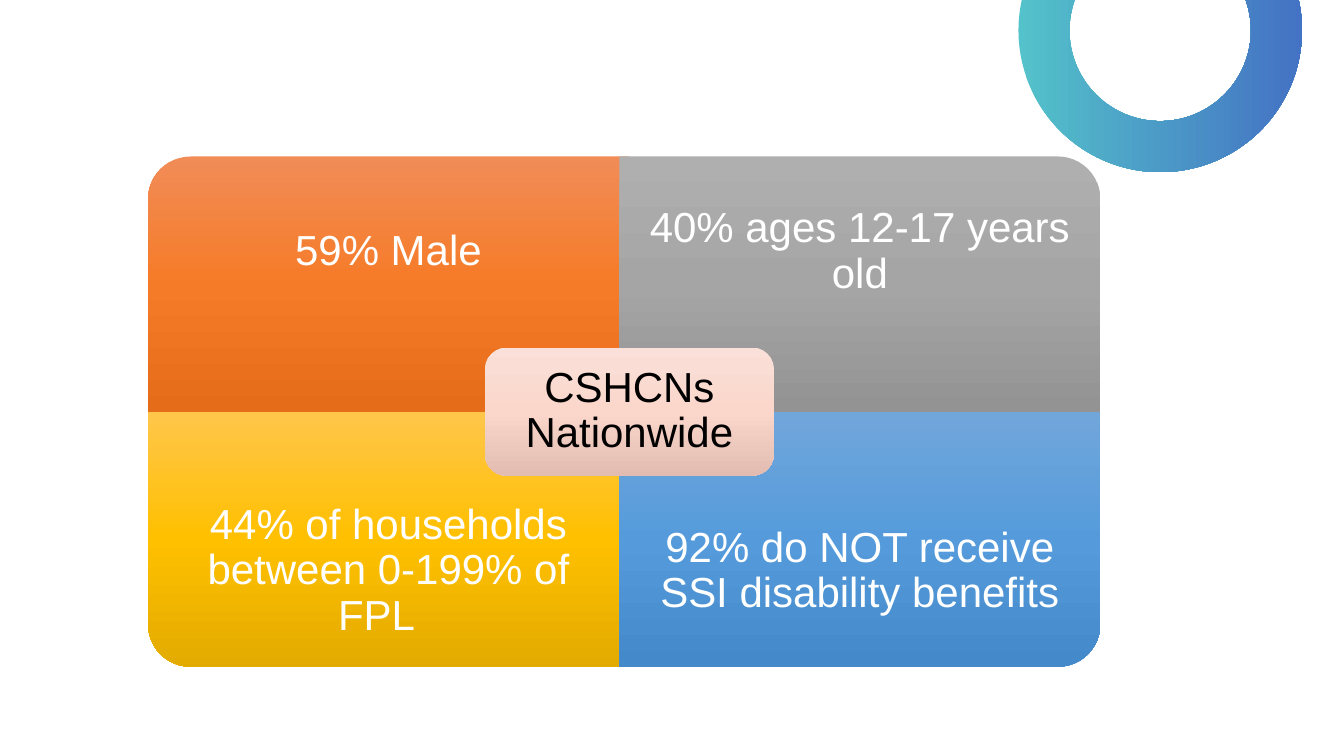
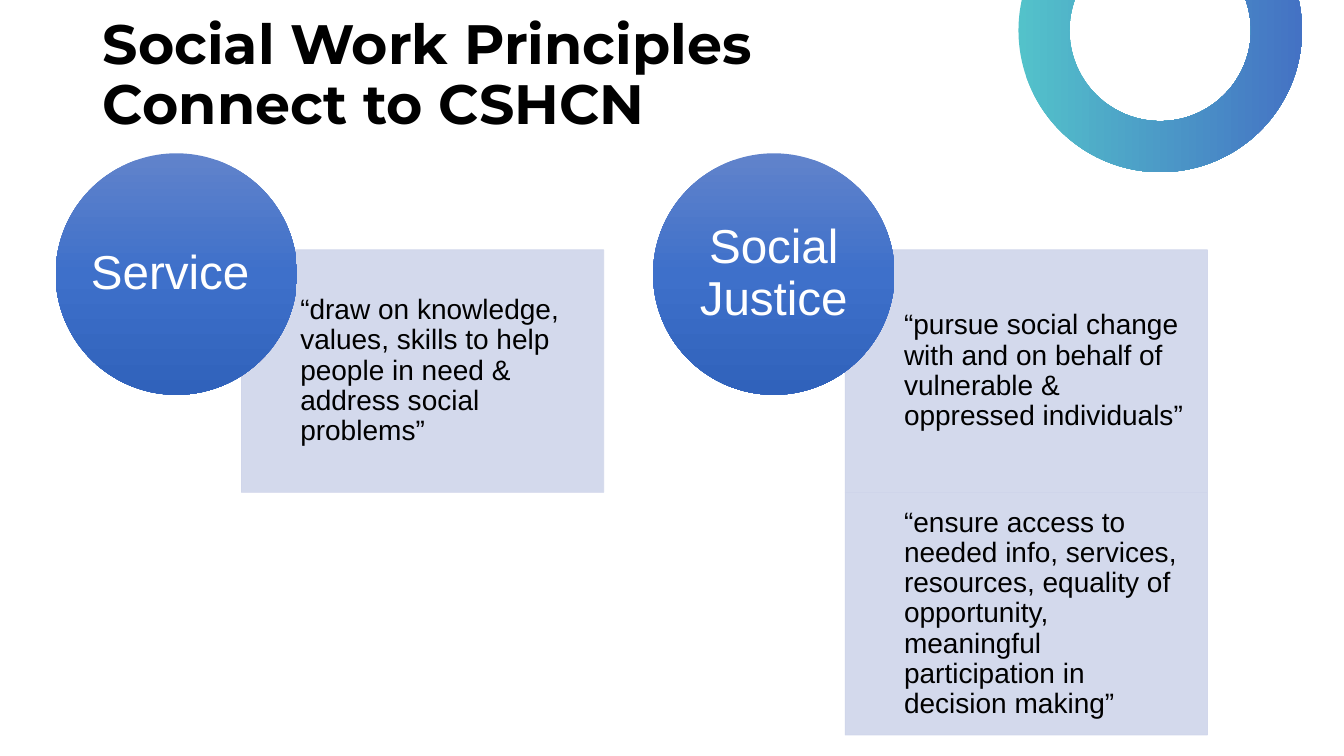
from dataclasses import dataclass

from lxml import etree
from pptx import Presentation
from pptx import util as u
from pptx.dml.color import RGBColor
from pptx.enum import shapes, text
from pptx.oxml import ns

PX = 9525  # EMU in one px
KIND = shapes.MSO_SHAPE


@dataclass(frozen=True)
class Theme:
    heading: str = "Montserrat"
    body: str = "Arial"
    dark: str = "000000"
    light: str = "FFFFFF"
    title_size: float = 39.6
    circle_size: int = 34
    tile_size: int = 30
    panel_size: int = 20
    spacing: float = 0.9
    ring: tuple = ("53C2CA", "4472C4")
    orange: tuple = ("F18C57", "F67B28", "E56C19")
    grey: tuple = ("AFAFAF", "A5A5A5", "939393")
    gold: tuple = ("FFC64B", "FFC000", "E3AB00")
    sky: tuple = ("71A6DB", "559BDB", "448ACA")
    blush: tuple = ("FAE0D8", "FAD6CB", "E2BCB1")
    blue: tuple = ("6183CB", "3E70CA", "3062BB")
    panel: str = "CFD5EA"
    panel_alpha: int = 90


T = Theme()


def px(*lengths):
    return [u.Emu(n * PX) for n in lengths]


def write(sp, words, size, color=T.dark, font=T.body, bold=False,
          align=text.PP_ALIGN.CENTER, insets=(0, 0, 0, 0)):
    """Fill a shape with one vertically centred paragraph; insets run left, top, right, bottom."""
    tf = sp.text_frame
    tf.word_wrap = True
    tf.auto_size = text.MSO_AUTO_SIZE.NONE
    tf.vertical_anchor = text.MSO_ANCHOR.MIDDLE
    tf.margin_left, tf.margin_top, tf.margin_right, tf.margin_bottom = px(*insets)
    p = tf.paragraphs[0]
    p.alignment = align
    p.line_spacing = T.spacing
    r = p.add_run()
    r.text = words
    r.font.name = font
    r.font.size = u.Pt(size)
    r.font.bold = bold
    r.font.color.rgb = RGBColor.from_string(color)


def add_plain(s, kind, box):
    sp = s.shapes.add_shape(kind, *px(*box))
    sp.shadow.inherit = False
    sp.line.fill.background()
    return sp


def add_gradient(s, kind, box, colors, angle=270):
    """Add a shape whose gradient keeps its direction when the shape is turned."""
    sp = add_plain(s, kind, box)
    sp.fill.gradient()
    sp.fill.gradient_angle = angle
    grad = sp.element.spPr.find(ns.qn("a:gradFill"))
    grad.set("rotWithShape", "0")
    stops = grad.find(ns.qn("a:gsLst"))
    for gs in list(stops):
        stops.remove(gs)
    for i, color in enumerate(colors):
        gs = etree.SubElement(stops, ns.qn("a:gs"), pos=str(100000 * i // (len(colors) - 1)))
        etree.SubElement(gs, ns.qn("a:srgbClr"), val=color)
    return sp


def move_ring_to_master(prs, s):
    """Draw the corner ring on a slide, then hand it to the master for all slides."""
    ring = add_gradient(s, KIND.DONUT, (970, -106, 270, 270), T.ring, angle=0)
    ring.adjustments[0] = 0.18
    ring.element.xpath(".//p:cNvPr")[0].set("id", "100")
    prs.slide_master.shapes.element.insert(2, ring.element)


def add_tile(s, box, rotation, colors, words, bottom):
    """Add a tile with one rounded corner; its words keep clear of the centre card."""
    x, y, w, h = box
    turned = rotation % 180 != 0
    tw, th = (h, w) if turned else (w, h)
    sp = add_gradient(s, KIND.ROUND_1_RECTANGLE,
                      (x + (w - tw) / 2, y + (h - th) / 2, tw, th), colors)
    sp.rotation = rotation
    label_h = h * 3 // 4
    label_y = y + h - label_h if bottom else y
    label = s.shapes.add_textbox(*px(x, label_y, w, label_h))
    write(label, words, T.tile_size, T.light, insets=(22,) * 4)


def add_matrix(s, box, tiles, centre):
    x, y, w, h = box
    tile_w, tile_h, overlap = 458, h // 2, 9
    for i, (rotation, colors, words) in enumerate(tiles):
        row, col = divmod(i, 2)
        add_tile(s, (x + col * (tile_w - overlap), y + row * tile_h, tile_w, tile_h),
                 rotation, colors, words, bottom=row == 1)
    card_w, card_h = 275, 122
    card = add_gradient(s, KIND.ROUNDED_RECTANGLE,
                        (x + (w - card_w) // 2 + 5, y + (h - card_h) // 2, card_w, card_h), T.blush)
    write(card, centre, T.tile_size, insets=(12,) * 4)


def add_panel(s, box, words):
    sp = add_plain(s, KIND.RECTANGLE, box)
    for fill in (sp.fill, sp.line.fill):
        fill.solid()
        fill.fore_color.rgb = RGBColor.from_string(T.panel)
    sp.line.width = u.Pt(0.5)
    for color in sp.element.spPr.iter(ns.qn("a:srgbClr")):
        etree.SubElement(color, ns.qn("a:alpha"), val=str(T.panel_alpha * 1000))
    write(sp, words, T.panel_size, align=text.PP_ALIGN.LEFT, insets=(56, 15, 15, 15))


def add_principle(s, x, y, indent, name, quotes):
    """Add a named circle over a stack of quote panels, which start indent px to its right."""
    panel_w, panel_h, drop, circle = 345, 231, 92, 230
    for i, quote in enumerate(quotes):
        add_panel(s, (x + indent, y + drop + i * panel_h, panel_w, panel_h), quote)
    sp = add_gradient(s, KIND.OVAL, (x, y, circle, circle), T.blue)
    write(sp, name, T.circle_size, T.light)


def set_title(s, box, words):
    sp = s.shapes.title
    sp.left, sp.top, sp.width, sp.height = px(*box)
    write(sp, words, T.title_size, font=T.heading, bold=True,
          align=text.PP_ALIGN.LEFT, insets=(10, 5, 10, 5))


def build_nationwide(s):
    tiles = (
        (270, T.orange, "59% Male"),
        (0, T.grey, "40% ages 12-17 years old"),
        (180, T.gold, "44% of households between 0-199% of FPL\t"),
        (90, T.sky, "92% do NOT receive SSI disability benefits"),
    )
    add_matrix(s, (141, 149, 907, 486), tiles, "CSHCNs Nationwide")


def build_principles(s):
    set_title(s, (88, 38, 878, 70), "Social Work Principles Connect to CSHCN")
    principles = (
        (53, 177, "Service\t",
         ("“draw on knowledge, values, skills to help people in need & address social problems”",)),
        (622, 183, "Social Justice",
         ("“pursue social change with and on behalf of vulnerable & oppressed individuals”",
          "“ensure access to needed info, services, resources, equality of opportunity, "
          "meaningful participation in decision making”")),
    )
    for x, indent, name, quotes in principles:
        add_principle(s, x, 146, indent, name, quotes)


def main():
    prs = Presentation()
    prs.slide_width, prs.slide_height = px(1280, 720)
    title_only, blank = prs.slide_layouts[5], prs.slide_layouts[6]
    s = prs.slides.add_slide(blank)
    move_ring_to_master(prs, s)
    build_nationwide(s)
    build_principles(prs.slides.add_slide(title_only))
    prs.save("out.pptx")


if __name__ == "__main__":
    main()
